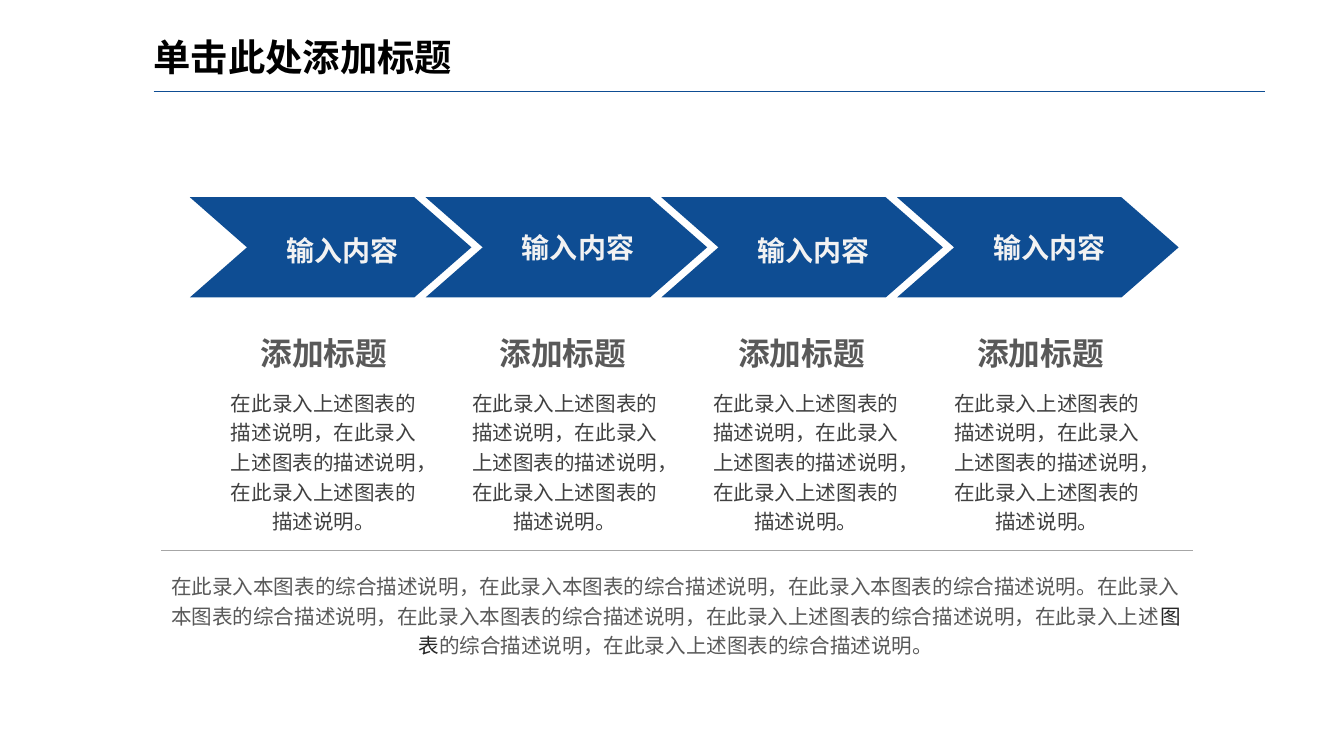
from lxml import etree
from pptx import Presentation
from pptx.dml.color import RGBColor
from pptx.enum.shapes import MSO_CONNECTOR, MSO_SHAPE
from pptx.enum.text import MSO_ANCHOR, MSO_AUTO_SIZE, PP_ALIGN
from pptx.oxml.ns import qn
from pptx.util import Inches, Pt

COLORS = {
    "blue": "0E4D93",
    "black": "000000",
    "label": "F2F2F2",
    "gray": "595959",
    "body": "404040",
    "dark": "262626",
    "rule": "A6A6A6",
}
CJK_FONT = "Noto Sans CJK SC"

deck = Presentation()
deck.slide_width, deck.slide_height = Inches(12.6), Inches(7.09)
page = deck.slides.add_slide(deck.slide_layouts[6])


def add_text(text, *, at, size, color, font=CJK_FONT, bold=False, align=PP_ALIGN.CENTER,
             anchor=MSO_ANCHOR.TOP, spacing=None, wrap=True, inset=(0.09, 0.05)):
    """Add a text box; text is a string or a list of (string, color) spans."""
    box = page.shapes.add_textbox(*[Inches(length) for length in at])
    frame = box.text_frame
    frame.word_wrap = wrap
    frame.auto_size = MSO_AUTO_SIZE.SHAPE_TO_FIT_TEXT
    frame.vertical_anchor = anchor
    frame.margin_left = frame.margin_right = Inches(inset[0])
    frame.margin_top = frame.margin_bottom = Inches(inset[1])
    para = frame.paragraphs[0]
    para.alignment = align
    if spacing:
        para.line_spacing = spacing
    for words, span_color in [(text, color)] if isinstance(text, str) else text:
        span = para.add_run()
        span.text = words
        span.font.size = Pt(size)
        span.font.bold = bold
        span.font.color.rgb = RGBColor.from_string(COLORS[span_color])
        span.font.name = font
        # East Asian characters take their own typeface
        etree.SubElement(span.font._element, qn("a:ea"), typeface=font)


# Title
add_text("单击此处添加标题", at=(1.34, 0.27, 10.52, 0.53), size=25.2, color="black",
         bold=True, align=PP_ALIGN.LEFT, inset=(0.1, 0.05))

# Rules under the title and above the summary
for left, right, top, color in [(1.44, 11.86, 0.86, "blue"), (1.51, 11.18, 5.16, "rule")]:
    rule = page.shapes.add_connector(MSO_CONNECTOR.STRAIGHT, Inches(left), Inches(top),
                                     Inches(right), Inches(top))
    rule.line.color.rgb = RGBColor.from_string(COLORS[color])
    rule.line.width = Pt(0.75)
    etree.SubElement(rule._element.spPr, qn("a:effectLst"))

# Four steps: chevron, label, heading and description
for step in range(4):
    chevron = page.shapes.add_shape(MSO_SHAPE.CHEVRON, Inches(1.78 + 2.21 * step),
                                    Inches(1.85), Inches(2.64), Inches(0.94))
    chevron.adjustments[0] = 0.57
    chevron.shadow.inherit = False
    chevron.fill.solid()
    chevron.fill.fore_color.rgb = RGBColor.from_string(COLORS["blue"])
    chevron.line.fill.background()

    # The first and third labels have wider line spacing
    wide = step % 2 == 0
    add_text("输入内容", at=(2.09 + 2.21 * step, 2.08 if wide else 2.11, 2.24, 0.48 if wide else 0.42),
             size=18.9, color="label", font="Arial", bold=True, anchor=MSO_ANCHOR.MIDDLE,
             spacing=1.2 if wide else None, inset=(0.1, 0.05))
    add_text("添加标题", at=(2.34 + 2.24 * step, 3.08, 1.39, 0.46), size=21.4, color="gray",
             bold=True, wrap=False)
    add_text("在此录入上述图表的描述说明，在此录入上述图表的描述说明，在此录入上述图表的描述说明。",
             at=(2.06 + 2.26 * step, 3.57, 1.95, 1.49), size=13.9, color="body", spacing=1.2)

# Summary
summary = [
    ("在此录入本图表的综合描述说明，在此录入本图表的综合描述说明，在此录入本图表的综合描述说明。"
     "在此录入本图表的综合描述说明，在此录入本图表的综合描述说明，在此录入上述图表的综合描述说明，"
     "在此录入上述", "gray"),
    ("图表", "dark"),
    ("的综合描述说明，在此录入上述图表的综合描述说明。", "gray"),
]
add_text(summary, at=(1.49, 5.29, 9.7, 0.93), size=13.9, color="gray", spacing=1.2)

deck.save("out.pptx")
